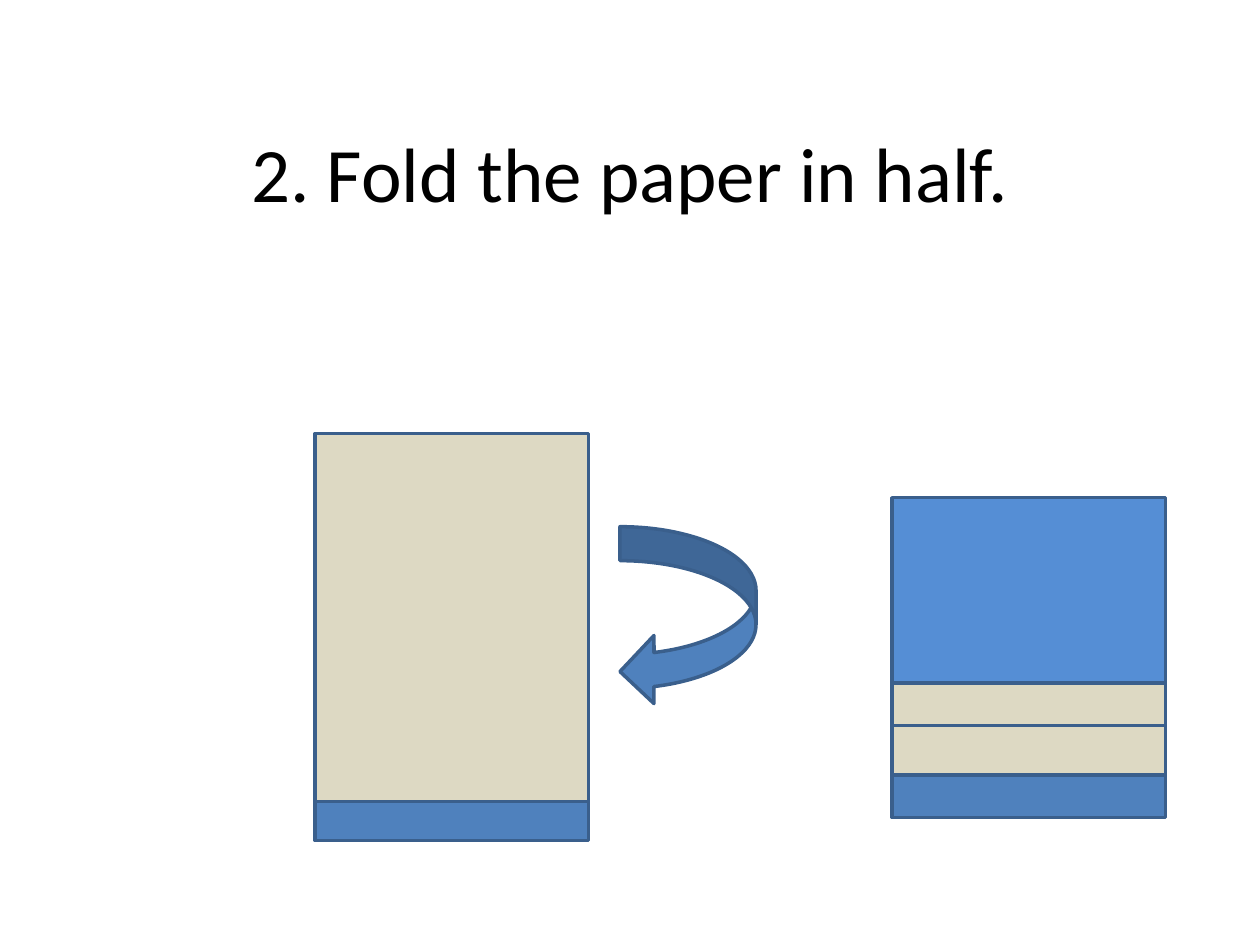
from dataclasses import dataclass

from pptx import Presentation
from pptx.dml.color import RGBColor
from pptx.enum import shapes, text
from pptx.util import Inches, Pt

BLACK = RGBColor(0x00, 0x00, 0x00)
BLUE = RGBColor(0x4F, 0x81, 0xBD)
BRIGHT = RGBColor(0x55, 0x8E, 0xD5)
TAN = RGBColor(0xDD, 0xD9, 0xC3)
EDGE = RGBColor(0x3A, 0x5F, 0x8C)
KIND = shapes.MSO_SHAPE


@dataclass
class Sheet:
    left: float
    top: float
    high: float
    fill: RGBColor
    wide: float = 2.17


SHEETS = [
    # Open paper
    Sheet(2.5, 3.75, 2.92, BLUE),
    Sheet(2.5, 3.44, 2.92, TAN),
    # Folded paper, back layer first
    Sheet(7.08, 5.03, 1.46, BLUE),
    Sheet(7.08, 4.69, 1.46, TAN),
    Sheet(7.08, 4.3, 1.46, TAN),
    Sheet(7.08, 3.95, 1.47, BRIGHT),
]


def add_shape(slide, kind: KIND, sheet: Sheet):
    shape = slide.shapes.add_shape(
        kind, Inches(sheet.left), Inches(sheet.top),
        Inches(sheet.wide), Inches(sheet.high))
    shape.shadow.inherit = False
    shape.fill.solid()
    shape.fill.fore_color.rgb = sheet.fill
    shape.line.color.rgb = EDGE
    shape.line.width = Pt(2)
    return shape


def add_title(slide, words: str) -> None:
    box = slide.shapes.add_textbox(
        Inches(0.5), Inches(0.3), Inches(9), Inches(2.12))
    frame = box.text_frame
    frame.word_wrap = True
    frame.vertical_anchor = text.MSO_ANCHOR.MIDDLE
    frame.text = words
    para = frame.paragraphs[0]
    para.alignment = text.PP_ALIGN.CENTER
    font = para.runs[0].font
    font.name = "Calibri"
    font.size = Pt(44)
    font.color.rgb = BLACK


def add_arrow(slide) -> None:
    """Draw the fold arrow, turned and mirrored to sweep down and left."""
    place = Sheet(4.75, 4.35, 1.08, BLUE, wide=1.42)
    arrow = add_shape(slide, KIND.CURVED_UP_ARROW, place)
    arrow.rotation = 270
    arrow._element.spPr.xfrm.set("flipH", "1")


def main() -> None:
    deck = Presentation()
    deck.slide_width, deck.slide_height = Inches(10), Inches(7.5)
    slide = deck.slides.add_slide(deck.slide_layouts[6])
    add_title(slide, "2. Fold the paper in half.")
    for sheet in SHEETS:
        add_shape(slide, KIND.RECTANGLE, sheet)
    add_arrow(slide)
    deck.save("out.pptx")


if __name__ == "__main__":
    main()
